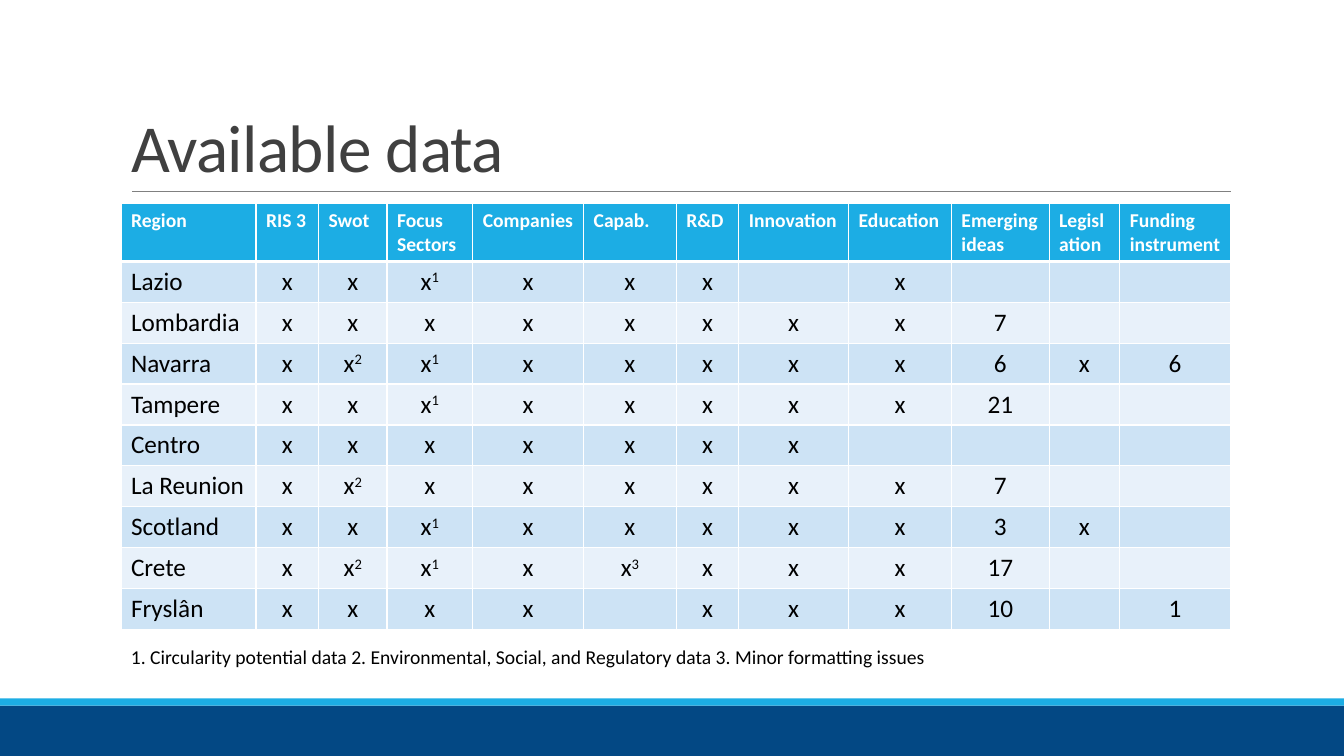
from lxml import etree
from pptx import Presentation
from pptx import util as u
from pptx.dml.color import RGBColor
from pptx.enum import shapes, text
from pptx.oxml import ns

UNIT = u.Inches(0.1)
FONT = "Calibri"
WIDE = 133.33
COLS = [13.4, 6.2, 6.8, 8.5, 11, 9.2, 6.2, 10.9, 10.2, 9.7, 7, 11]
HEAD = ("Region|RIS 3|Swot|Focus Sectors|Companies|Capab.|R&D|Innovation|"
        "Education|Emerging ideas|Legislation|Funding instrument")
ROWS = [
    "Lazio|x|x|x1|x|x|x||x|||",
    "Lombardia|x|x|x|x|x|x|x|x|7||",
    "Navarra|x|x2|x1|x|x|x|x|x|6|x|6",
    "Tampere|x|x|x1|x|x|x|x|x|21||",
    "Centro|x|x|x|x|x|x|x||||",
    "La Reunion|x|x2|x|x|x|x|x|x|7||",
    "Scotland|x|x|x1|x|x|x|x|x|3|x|",
    "Crete|x|x2|x1|x|x3|x|x|x|17||",
    "Fryslân|x|x|x|x||x|x|x|10||1",
]
NOTE = ("1. Circularity potential data 2. Environmental, Social, and "
        "Regulatory data 3. Minor formatting issues")


def grid(*vals):
    """Turn grid columns and rows into lengths."""
    return [u.Emu(int(v * UNIT)) for v in vals]


def tint(code):
    """Turn a hex string into a colour."""
    return RGBColor.from_string(code)


def style(font, size, color, bold=False):
    """Set the face, size, colour and weight of a font."""
    font.name, font.size, font.bold = FONT, u.Pt(size), bold
    font.color.rgb = tint(color)


def edge(cell, tag, width):
    """Draw one white border of a cell."""
    line = etree.SubElement(cell._tc.get_or_add_tcPr(), ns.qn("a:" + tag),
                            w=str(u.Pt(width)))
    fill = etree.SubElement(line, ns.qn("a:solidFill"))
    etree.SubElement(fill, ns.qn("a:srgbClr"), val="FFFFFF")


def write(cell, word, row, col):
    """Write and format one cell, raising the note number after an x."""
    for tag in ("lnL", "lnR", "lnT", "lnB"):
        thick = (row, tag) in ((0, "lnB"), (1, "lnT"))
        edge(cell, tag, 3 if thick else 1)
    cell.fill.solid()
    shade = "1CADE4" if row == 0 else ("E8F1FA", "CDE3F5")[row % 2]
    cell.fill.fore_color.rgb = tint(shade)
    para = cell.text_frame.paragraphs[0]
    if row and col:
        para.alignment = text.PP_ALIGN.CENTER
    mark = word[1:] if row and word.startswith("x") else ""
    para.text = "x" if mark else word
    if mark:
        sup = para.add_run()
        sup.text = mark
        sup._r.get_or_add_rPr().set("baseline", "30000")
    for run in para.runs:
        if row:
            style(run.font, 18, "000000")
        else:
            style(run.font, 14, "FFFFFF", True)


def frame(slide, top, deep):
    """Draw the footer bands and the rule below the title."""
    for y, h, color in ((70, 5, "034884"), (69.3, 0.7, "1CADE4")):
        band = slide.shapes.add_shape(shapes.MSO_SHAPE.RECTANGLE,
                                      *grid(0, y, WIDE, h))
        band.shadow.inherit = False
        band.fill.solid()
        band.fill.fore_color.rgb = tint(color)
        band.line.fill.background()
    rule = slide.shapes.add_connector(shapes.MSO_CONNECTOR.STRAIGHT,
                                      *grid(13.1, top + deep, 122.1, top + deep))
    rule.line.color.rgb = tint("808080")
    rule.line.width = u.Pt(0.5)
    etree.SubElement(rule._element.spPr, ns.qn("a:effectLst"))


def title(slide, x, y, w, h):
    """Place the title at the bottom of its box."""
    head = slide.shapes.title
    head.left, head.top, head.width, head.height = grid(x, y, w, h)
    body = head.text_frame
    body.text = "Available data"
    body.auto_size = text.MSO_AUTO_SIZE.NONE
    body.vertical_anchor = text.MSO_ANCHOR.BOTTOM
    para = body.paragraphs[0]
    para.alignment = text.PP_ALIGN.LEFT
    para.line_spacing = 0.85
    run = para.runs[0]
    style(run.font, 48, "404040")
    run._r.get_or_add_rPr().set("spc", "-50")


def matrix(slide, x, y, w, h):
    """Fill the table of regions and data kinds."""
    lines = [HEAD] + ROWS
    table = slide.shapes.add_table(len(lines), len(COLS),
                                   *grid(x, y, w, h)).table
    table.horz_banding = False
    for col, wide in zip(table.columns, COLS):
        col.width = grid(wide)[0]
    for r, line in enumerate(lines):
        table.rows[r].height = u.Pt(29.2)
        for c, word in enumerate(line.split("|")):
            write(table.cell(r, c), word, r, c)


def note(slide, x, y, w, h):
    """Write the notes below the table."""
    body = slide.shapes.add_textbox(*grid(x, y, w, h)).text_frame
    body.word_wrap = True
    body.text = NOTE
    style(body.paragraphs[0].runs[0].font, 14, "000000")


def main():
    """Build and save the slide."""
    deck = Presentation()
    deck.slide_width, deck.slide_height = grid(WIDE, 75)
    slide = deck.slides.add_slide(deck.slide_layouts[5])
    frame(slide, 3.1, 15.9)
    title(slide, 12, 3.1, 110, 15.9)
    matrix(slide, 12, 20.2, 110, 42.2)
    note(slide, 12, 63.5, 110, 3.4)
    deck.save("out.pptx")


if __name__ == "__main__":
    main()
